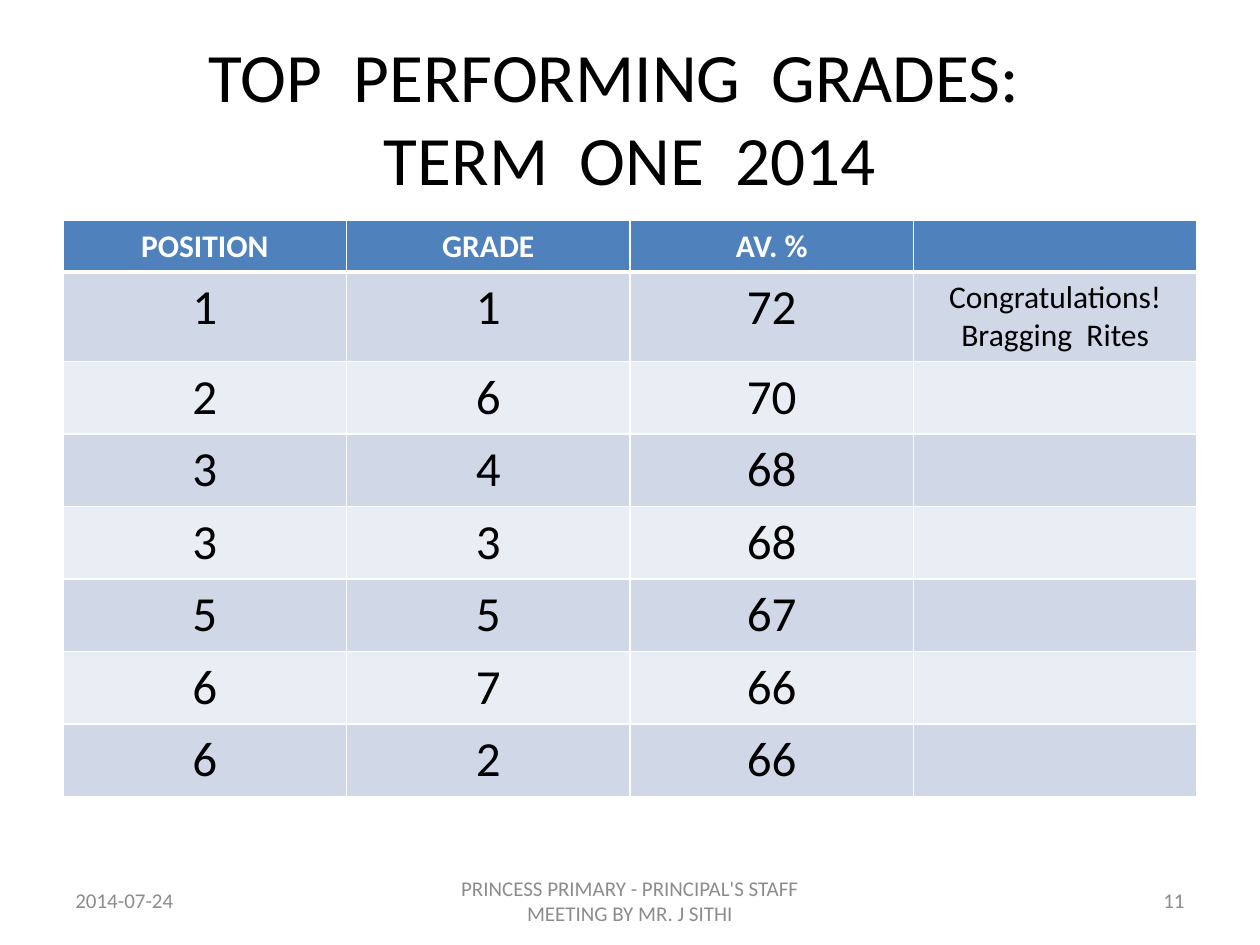
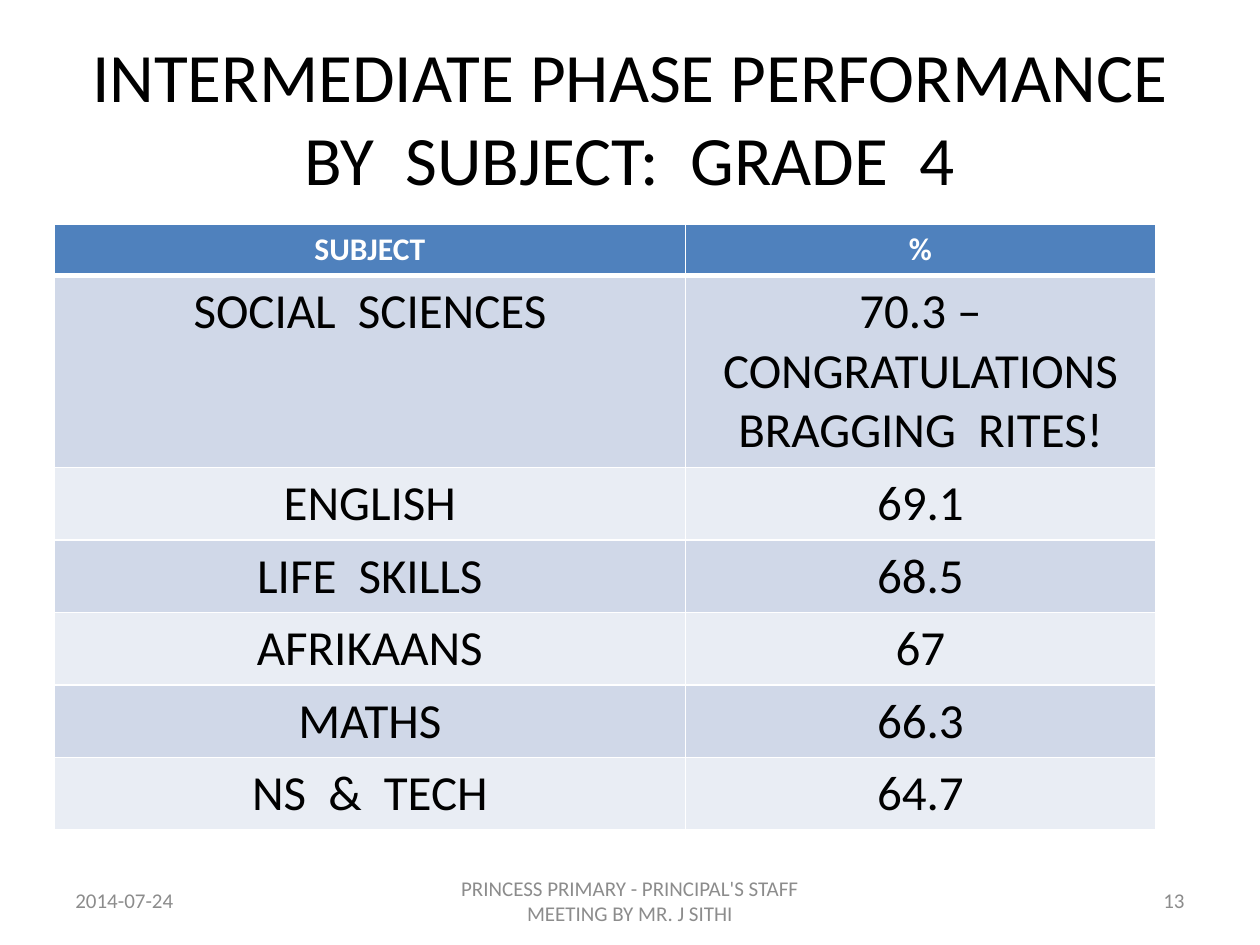
from lxml import etree
from pptx import Presentation
from pptx.dml.color import RGBColor
from pptx.enum.text import MSO_ANCHOR, MSO_AUTO_SIZE, PP_ALIGN
from pptx.oxml.ns import qn
from pptx.util import Cm, Pt

LEFT, CENTER, RIGHT = PP_ALIGN.LEFT, PP_ALIGN.CENTER, PP_ALIGN.RIGHT
MIDDLE = MSO_ANCHOR.MIDDLE
NO_FIT = MSO_AUTO_SIZE.NONE

COLORS = {
    "text": "000000",
    "header_text": "FFFFFF",
    "footer_text": "8C8C8C",
    "header": "4F81BD",
    "odd_row": "D0D8E8",
    "even_row": "E9EDF4",
    "rule": "FFFFFF",
}
FONTS = {
    "title": {"name": "Calibri", "size": Pt(39.6), "bold": False},
    "header": {"name": "Calibri", "size": Pt(18), "bold": True},
    "result": {"name": "Calibri", "size": Pt(28), "bold": False},
    "remark": {"name": "Calibri", "size": Pt(18), "bold": False},
    "footer": {"name": "Calibri", "size": Pt(12), "bold": False},
}
FRAME = {"word_wrap": True, "auto_size": NO_FIT, "vertical_anchor": MIDDLE}
TITLE_BOX = {"left": Cm(1.27), "top": Cm(0.76), "width": Cm(22.86), "height": Cm(3.18)}
ROW_HEIGHT = Cm(1.03)

MEETING_DATE = "2014-07-24"
MEETING = "PRINCESS PRIMARY - PRINCIPAL'S STAFF MEETING BY MR. J SITHI"

GRADES = [
    ("POSITION", "GRADE", "AV. %", ""),
    ("1", "1", "72", "Congratulations!\nBragging  Rites"),
    ("2", "6", "70", ""),
    ("3", "4", "68", ""),
    ("3", "3", "68", ""),
    ("5", "5", "67", ""),
    ("6", "7", "66", ""),
    ("6", "2", "66", ""),
]
SUBJECTS = [
    ("SUBJECT", "%"),
    ("SOCIAL  SCIENCES", "70.3 – CONGRATULATIONS\nBRAGGING  RITES!"),
    ("ENGLISH", "69.1"),
    ("LIFE  SKILLS", "68.5"),
    ("AFRIKAANS", "67"),
    ("MATHS", "66.3"),
    ("NS  &  TECH", "64.7"),
]


def apply(target, values):
    for name, value in values.items():
        setattr(target, name, value)


def write(frame, text, font, color, align=CENTER):
    frame.text = text
    for paragraph in frame.paragraphs:
        paragraph.alignment = align
        for run in paragraph.runs:
            apply(run.font, FONTS[font])
            run.font.color.rgb = RGBColor.from_string(COLORS[color])


def add_title(slide, text):
    title = slide.shapes.title
    apply(title, TITLE_BOX)
    apply(title.text_frame, FRAME)
    write(title.text_frame, text, "title", "text")


def add_footer(slide, number):
    parts = [
        (1.27, 5.93, MEETING_DATE, LEFT),
        (8.68, 8.04, MEETING, CENTER),
        (18.2, 5.93, str(number), RIGHT),
    ]
    for left, width, text, align in parts:
        box = slide.shapes.add_textbox(Cm(left), Cm(17.65), Cm(width), Cm(1.01))
        apply(box.text_frame, FRAME)
        write(box.text_frame, text, "footer", "footer_text", align)


def set_borders(cell, top, bottom):
    properties = cell._tc.get_or_add_tcPr()
    widths = {"a:lnL": 1, "a:lnR": 1, "a:lnT": top, "a:lnB": bottom}
    for index, (side, width) in enumerate(widths.items()):
        line = etree.Element(qn(side), w=str(Pt(width)))
        fill = etree.SubElement(line, qn("a:solidFill"))
        etree.SubElement(fill, qn("a:srgbClr"), val=COLORS["rule"])
        properties.insert(index, line)


def style_cell(cell, row, fill):
    cell.fill.solid()
    cell.fill.fore_color.rgb = RGBColor.from_string(COLORS[fill])
    set_borders(cell, 3 if row == 1 else 1, 3 if row == 0 else 1)


def add_results(slide, rows, left, top, height, widths, remark_column=None):
    frame = slide.shapes.add_table(
        len(rows), len(widths), Cm(left), Cm(top), Cm(sum(widths)), Cm(height))
    table = frame.table
    for column, width in zip(table.columns, widths):
        column.width = Cm(width)
    for r, values in enumerate(rows):
        table.rows[r].height = ROW_HEIGHT
        fill = "header" if r == 0 else "odd_row" if r % 2 else "even_row"
        for c, value in enumerate(values):
            cell = table.cell(r, c)
            style_cell(cell, r, fill)
            font = "header" if r == 0 else "remark" if c == remark_column else "result"
            write(cell.text_frame, value, font, "header_text" if r == 0 else "text")
    frame.height = Cm(height)


def add_result_slide(deck, title, number, rows, **layout):
    slide = deck.slides.add_slide(deck.slide_layouts[5])
    add_title(slide, title)
    add_results(slide, rows, **layout)
    add_footer(slide, number)


def main():
    deck = Presentation()
    deck.slide_width, deck.slide_height = Cm(25.4), Cm(19.05)
    add_result_slide(
        deck, "TOP  PERFORMING  GRADES:  \vTERM  ONE  2014", 11, GRADES,
        left=1.27, top=4.45, height=11.46, widths=[5.715] * 4, remark_column=3)
    add_result_slide(
        deck, "INTERMEDIATE PHASE PERFORMANCE BY  SUBJECT:  GRADE  4", 13, SUBJECTS,
        left=1.09, top=4.52, height=12.04, widths=[12.73, 9.47])
    deck.save("out.pptx")


if __name__ == "__main__":
    main()
